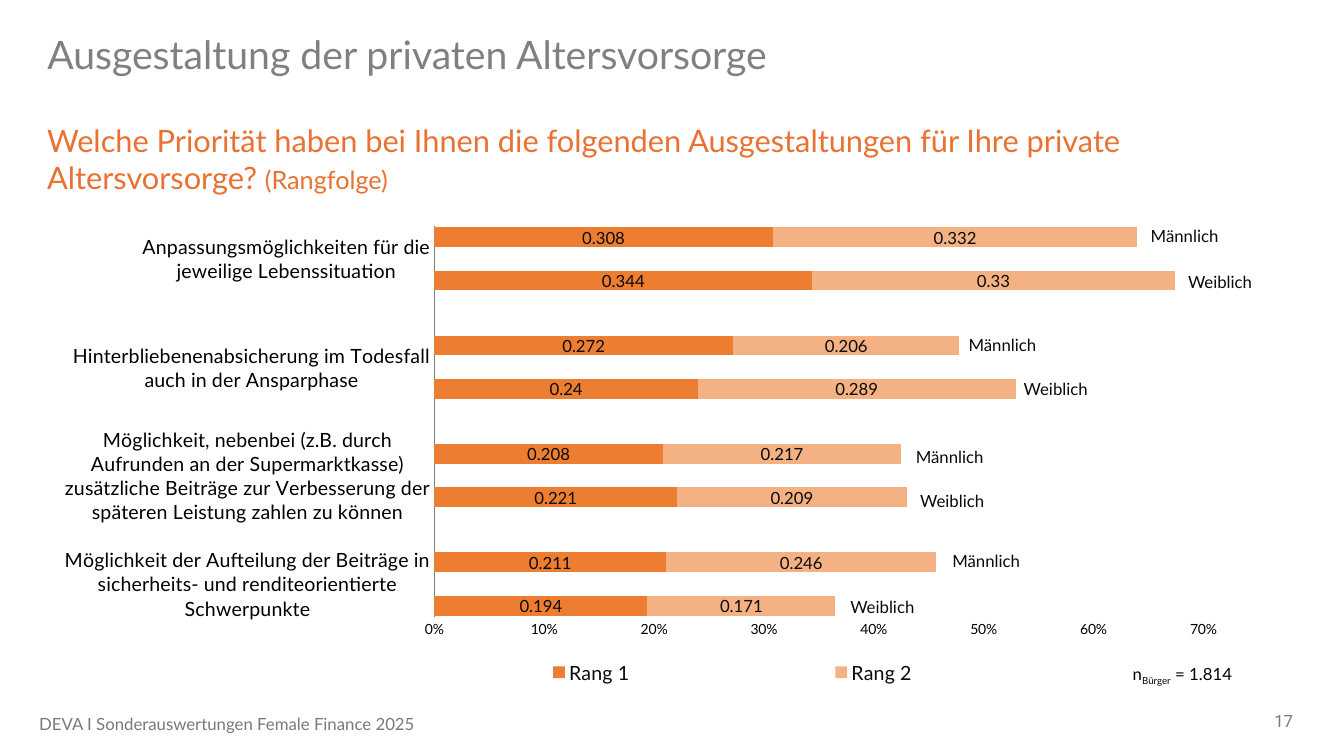
import pptx
import pptx.chart.data
import pptx.dml.color
import pptx.enum.chart
import pptx.enum.text
import pptx.oxml
import pptx.oxml.ns
import pptx.util

Cm, Pt = pptx.util.Cm, pptx.util.Pt
RGB = pptx.dml.color.RGBColor.from_string
ALIGN = pptx.enum.text.PP_ALIGN
ANCHOR = pptx.enum.text.MSO_ANCHOR
FIT = pptx.enum.text.MSO_AUTO_SIZE
XL = pptx.enum.chart

THEME = {
    "title": {"name": "Lato", "size": Pt(28), "color": "808080"},
    "question": {"name": "Lato", "size": Pt(22), "color": "E97132"},
    "hint": {"name": "Lato", "size": Pt(18), "color": "E97132"},
    "sample": {"name": "Lato", "size": Pt(12), "color": "000000"},
    "label": {"name": "Lato", "size": Pt(12), "color": "0A0A0A"},
    "category": {"name": "Lato", "size": Pt(14), "color": "000000"},
    "scale": {"name": "Lato", "size": Pt(10), "color": "000000"},
    "legend": {"name": "Lato", "size": Pt(14), "color": "0A0A0A"},
    "chart": {"name": "Roboto", "size": Pt(18), "color": "000000"},
    "footer": {"name": "Lato", "size": Pt(12), "color": "797979"},
    "number": {"name": "Roboto", "size": Pt(12), "color": "797979"},
    "fills": ["ED7D31", "F4B183"],
    "axis": "808080",
}


def style(font, role):
    for key, value in THEME[role].items():
        if key == "color":
            font.color.rgb = RGB(value)
        else:
            setattr(font, key, value)


def write(sp, runs, frame={}, para={}):
    tf = sp.text_frame
    for key, value in ({"word_wrap": True} | frame).items():
        setattr(tf, key, value)
    p = tf.paragraphs[0]
    for key, value in para.items():
        setattr(p, key, value)
    for text, role in runs:
        r = p.add_run()
        r.text = text
        style(r.font, role)
    return p


prs = pptx.Presentation()
prs.slide_width, prs.slide_height = Cm(33.87), Cm(19.05)
s = prs.slides.add_slide(prs.slide_layouts[5])

# Title
title = s.shapes.title
title.left, title.top, title.width, title.height = Cm(0.94), Cm(0.76), Cm(28.12), Cm(1.35)
write(title, [("Ausgestaltung der privaten Altersvorsorge", "title")],
      {"vertical_anchor": ANCHOR.MIDDLE, "auto_size": FIT.NONE},
      {"alignment": ALIGN.LEFT, "line_spacing": 0.9})

# Chart data: each topic takes rows for women, its label and men, then two gaps
topics = [
    ("Möglichkeit der Aufteilung der Beiträge in sicherheits- und renditeorientierte Schwerpunkte",
     (0.194, 0.171), (0.211, 0.246)),
    ("Möglichkeit, nebenbei (z.B. durch Aufrunden an der Supermarktkasse) zusätzliche Beiträge "
     "zur Verbesserung der späteren Leistung zahlen zu können",
     (0.221, 0.209), (0.208, 0.217)),
    ("Hinterbliebenenabsicherung im Todesfall auch in der Ansparphase",
     (0.24, 0.289), (0.272, 0.206)),
    ("Anpassungsmöglichkeiten für die jeweilige Lebenssituation",
     (0.344, 0.33), (0.308, 0.332)),
]
gap = ("", (None, None))
rows = []
for topic, women, men in topics:
    rows += [("", women), (topic, gap[1]), ("", men), gap, gap]
rows = rows[:-2]

data = pptx.chart.data.CategoryChartData()
data.categories = [name for name, values in rows]
for i, name in enumerate(["Rang 1", "Rang 2"]):
    data.add_series(name, [values[i] for label, values in rows])

# Stacked bars
chart = s.shapes.add_chart(XL.XL_CHART_TYPE.BAR_STACKED, Cm(1.63), Cm(5.38),
                           Cm(31.39), Cm(13.06), data).chart
chart.has_title = False
style(chart.font, "chart")
plot = chart.plots[0]
plot.gap_width, plot.overlap, plot.vary_by_categories = 10, 100, False
for series, fill in zip(plot.series, THEME["fills"]):
    series.format.fill.solid()
    series.format.fill.fore_color.rgb = RGB(fill)
    labels = series.data_labels
    for key, value in {"show_value": True, "number_format": "General",
                       "number_format_is_linked": False,
                       "position": XL.XL_LABEL_POSITION.CENTER}.items():
        setattr(labels, key, value)
    style(labels.font, "label")

# Axes
for axis, role in [(chart.category_axis, "category"), (chart.value_axis, "scale")]:
    axis.has_major_gridlines = False
    axis.major_tick_mark = axis.minor_tick_mark = XL.XL_TICK_MARK.NONE
    style(axis.tick_labels.font, role)
chart.category_axis.format.line.color.rgb = RGB(THEME["axis"])
chart.category_axis.format.line.width = Pt(0.75)
scale = chart.value_axis
scale.minimum_scale, scale.maximum_scale, scale.major_unit = 0, 0.7, 0.1
scale.format.line.fill.background()
scale.tick_labels.number_format = "0%"
scale.tick_labels.number_format_is_linked = False

# Legend
chart.has_legend = True
legend = chart.legend
legend.position = XL.XL_LEGEND_POSITION.BOTTOM
legend.include_in_layout = False
style(legend.font, "legend")

# Fixed places of plot and legend inside the chart
plot_area = chart._chartSpace.chart.plotArea
for parent, index, inner, box in [
    (plot_area, 0, '<c:layoutTarget val="inner"/>', (0.295, 0.025, 0.619, 0.753)),
    (legend._element, 1, "", (0.23, 0.85, 0.61, 0.07)),
]:
    for old in parent.findall(pptx.oxml.ns.qn("c:layout")):
        parent.remove(old)
    places = "".join(f'<c:{key} val="{value}"/>' for key, value in zip("xywh", box))
    parent.insert(index, pptx.oxml.parse_xml(
        f'<c:layout {pptx.oxml.ns.nsdecls("c")}><c:manualLayout>{inner}'
        f'<c:xMode val="edge"/><c:yMode val="edge"/>{places}</c:manualLayout></c:layout>'))

# Question
sp = s.shapes.add_textbox(Cm(0.94), Cm(2.95), Cm(27.79), Cm(2.13))
write(sp, [("Welche Priorität haben bei Ihnen die folgenden Ausgestaltungen für Ihre private "
            "Altersvorsorge? ", "question"), ("(Rangfolge)", "hint")],
      {"auto_size": FIT.SHAPE_TO_FIT_TEXT})

# Sample size with subscript
sp = s.shapes.add_textbox(Cm(26.8), Cm(16.59), Cm(4.5), Cm(0.77))
p = write(sp, [("n", "sample"), ("Bürger", "sample"), (" = 1.814", "sample")],
          {"auto_size": FIT.SHAPE_TO_FIT_TEXT}, {"alignment": ALIGN.RIGHT})
p.runs[1]._r.get_or_add_rPr().set("baseline", "-25000")

# Gender labels at the bar ends
bar_ends = {
    "Männlich": [(28.75, 5.31), (24.16, 8.05), (22.83, 10.87), (23.75, 13.49)],
    "Weiblich": [(29.69, 6.48), (25.55, 9.17), (22.94, 11.99), (21.18, 14.66)],
}
for gender, places in bar_ends.items():
    for left, top in places:
        sp = s.shapes.add_textbox(Cm(left), Cm(top), Cm(2.3), Cm(0.91))
        write(sp, [(gender, "label")],
              {"word_wrap": False, "auto_size": FIT.SHAPE_TO_FIT_TEXT},
              {"line_spacing": 1.5})

# Footer and page number
for text, role, left, top, width, align in [
    ("DEVA I Sonderauswertungen Female Finance 2025", "footer", 0.74, 17.73, 17.02, ALIGN.LEFT),
    ("17", "number", 25.22, 17.65, 7.62, ALIGN.RIGHT),
]:
    sp = s.shapes.add_textbox(Cm(left), Cm(top), Cm(width), Cm(1.02))
    write(sp, [(text, role)], {"vertical_anchor": ANCHOR.MIDDLE}, {"alignment": align})

prs.save("out.pptx")
